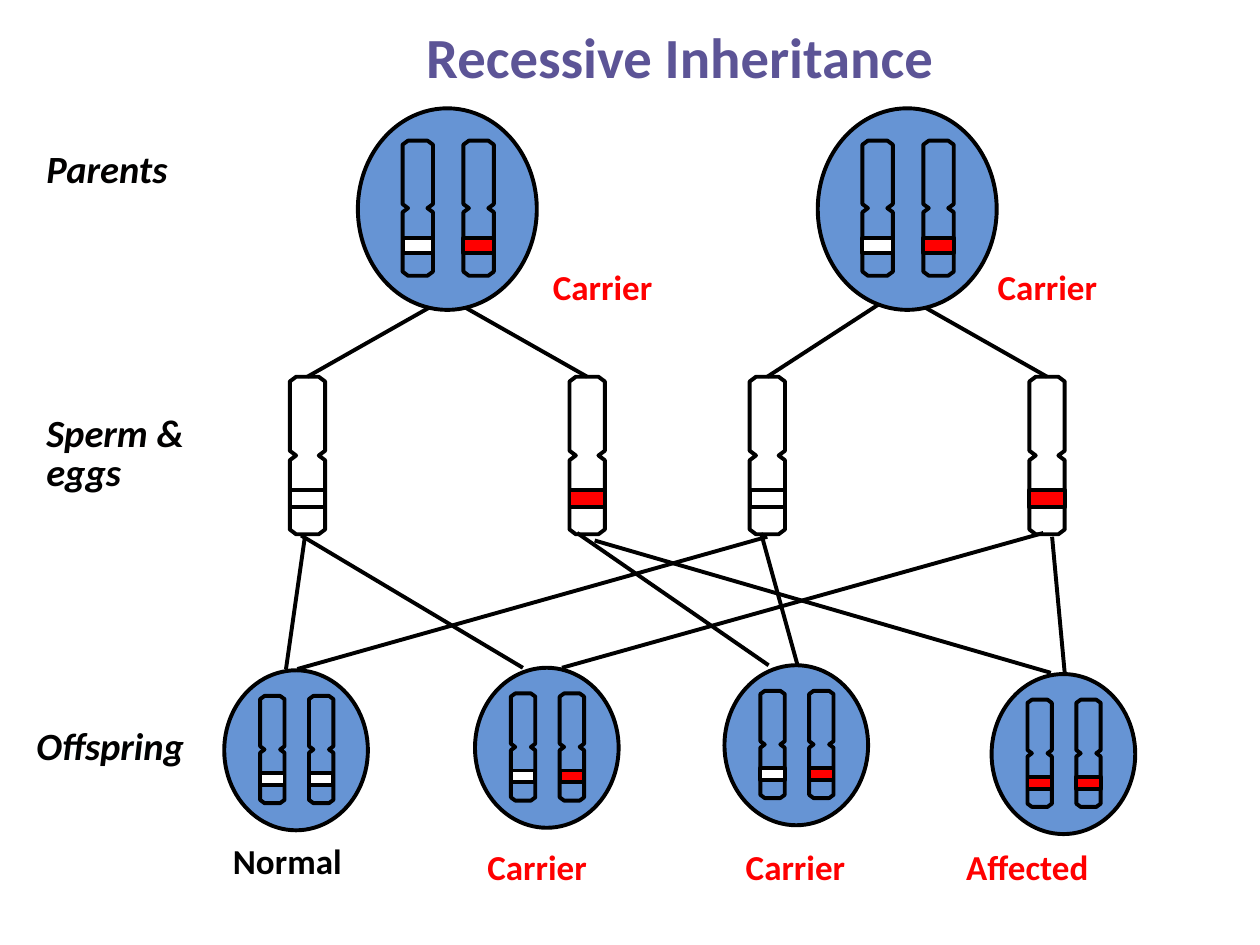
from pptx import Presentation, util as u
from pptx.dml.color import RGBColor
from pptx.enum import shapes, text
from pptx.oxml.ns import qn
from lxml import etree

COLORS = {"cell": "6694D4", "normal": "FFFFFF", "mutated": "FF0000", "line": "000000",
          "title": "5C5496", "row": "010000", "alert": "FF0000"}
rgb = {name: RGBColor.from_string(value) for name, value in COLORS.items()}
LINE_WIDTH = u.Pt(2.25)

prs = Presentation()
prs.slide_width, prs.slide_height = u.Inches(10), u.Inches(7.5)
s = prs.slides.add_slide(prs.slide_layouts[5])

# The grid has 100 columns and 75 rows
COL, ROW = prs.slide_width // 100, prs.slide_height // 75

# Chromosome outline as shares of its width and height
OUTLINE = [(0, .03), (.18, 0), (.82, 0), (1, .03), (1, .47), (.82, .5), (1, .53), (1, .97),
           (.82, 1), (.18, 1), (0, .97), (0, .53), (.18, .5), (0, .47)]


def write(sp, words, size, color, italic=False, align=text.PP_ALIGN.LEFT, wrap=True,
          spacing=None, anchor=text.MSO_ANCHOR.TOP, fit=text.MSO_AUTO_SIZE.SHAPE_TO_FIT_TEXT):
    tf = sp.text_frame
    tf.word_wrap, tf.vertical_anchor, tf.auto_size = wrap, anchor, fit
    p = tf.paragraphs[0]
    p.alignment, p.line_spacing = align, spacing
    r = p.add_run()
    r.text = words
    r.font.name, r.font.size, r.font.bold, r.font.italic = "Calibri", u.Pt(size), True, italic
    r.font.color.rgb = rgb[color]


def chromosome(x, y, w, h, gene):
    points = [(round((x + w * px) * COL), round((y + h * py) * ROW)) for px, py in OUTLINE]
    builder = s.shapes.build_freeform(*points[0])
    builder.add_line_segments(points[1:], close=True)
    body = builder.convert_to_shape()
    body.fill.background()
    band = s.shapes.add_shape(shapes.MSO_SHAPE.RECTANGLE, round(x * COL),
                              round((y + .72 * h) * ROW), round(w * COL), round(.11 * h * ROW))
    band.fill.solid()
    band.fill.fore_color.rgb = rgb[gene]
    for sp in (body, band):
        sp.shadow.inherit = False
        sp.line.color.rgb, sp.line.width = rgb["line"], LINE_WIDTH


# Title
title = s.shapes.title
title.left, title.top, title.width, title.height = (
    round(7.9 * COL), round(1.9 * ROW), round(92.1 * COL), 5 * ROW)
write(title, "Recessive Inheritance", 32.4, "title", align=text.PP_ALIGN.CENTER,
      anchor=text.MSO_ANCHOR.MIDDLE, fit=text.MSO_AUTO_SIZE.NONE)

# Lines of descent: parents to gametes, then gametes to offspring
descent = [
    (35.5, 23.6, 24.4, 29.9), (35.5, 23.6, 46.6, 29.9),
    (70.6, 23.6, 60.9, 29.9), (72, 23.6, 83.1, 29.9),
    (60.9, 42.6, 23.6, 53.1), (24.2, 42.6, 22.7, 53.1),
    (83.5, 42.6, 84.5, 53.4), (47.2, 42.9, 83.4, 53.4),
    (60.4, 42.3, 63.3, 52.8), (45.8, 42.3, 61, 52.8),
    (82.8, 42.3, 44.6, 53), (23.9, 42.5, 41.5, 53),
]
for x1, y1, x2, y2 in descent:
    line = s.shapes.add_connector(shapes.MSO_CONNECTOR.STRAIGHT, round(x1 * COL),
                                  round(y1 * ROW), round(x2 * COL), round(y2 * ROW))
    line.line.color.rgb, line.line.width = rgb["line"], LINE_WIDTH
    etree.SubElement(line._element.spPr, qn("a:effectLst"))

# Parent and offspring cells, each with a pair of chromosomes
PARENT, CHILD = (14.2, 16), (11.4, 12.7)
cells = [
    (28.4, 8.6, PARENT, "normal", "mutated"),
    (64.9, 8.6, PARENT, "normal", "mutated"),
    (17.8, 53.2, CHILD, "normal", "normal"),
    (37.7, 53, CHILD, "normal", "mutated"),
    (57.5, 52.8, CHILD, "normal", "mutated"),
    (78.7, 53.5, CHILD, "mutated", "mutated"),
]
for x, y, (w, h), *genes in cells:
    cell = s.shapes.add_shape(shapes.MSO_SHAPE.OVAL, round(x * COL), round(y * ROW),
                              round(w * COL), round(h * ROW))
    cell.shadow.inherit = False
    cell.fill.solid()
    cell.fill.fore_color.rgb = rgb["cell"]
    cell.line.color.rgb, cell.line.width = rgb["line"], LINE_WIDTH
    for share, gene in zip((.25, .59), genes):
        chromosome(x + share * w, y + .16 * h, .17 * w, .67 * h, gene)

# Sperm and eggs: one chromosome each
for x, gene in ((23, "normal"), (45.2, "mutated"), (59.5, "normal"), (81.7, "mutated")):
    chromosome(x, 29.9, 2.8, 12.5, gene)

# Row headings
for words, x, y, w, h, wrap in (("Parents", 2.7, 11.6, 13.2, 4.1, False),
                                ("Sperm & eggs", 2.7, 32.5, 17, 7.2, True),
                                ("Offspring", 1.9, 57.4, 15.8, 4.1, False)):
    box = s.shapes.add_textbox(round(x * COL), round(y * ROW), round(w * COL), round(h * ROW))
    write(box, words, 22, "row", italic=True, wrap=wrap, spacing=.85,
          anchor=text.MSO_ANCHOR.MIDDLE)

# Status of each person
for words, x, y, w, color in (("Carrier", 42.9, 20.6, 18.3, "alert"),
                              ("Carrier", 78.2, 20.6, 18.3, "alert"),
                              ("Normal", 17.5, 66.1, 11.8, "line"),
                              ("Carrier", 37.7, 66.6, 11.6, "alert"),
                              ("Carrier", 58.2, 66.6, 12.5, "alert"),
                              ("Affected", 75.7, 66.6, 15.7, "alert")):
    box = s.shapes.add_textbox(round(x * COL), round(y * ROW), round(w * COL), round(4.3 * ROW))
    write(box, words, 20, color)

prs.save("out.pptx")
